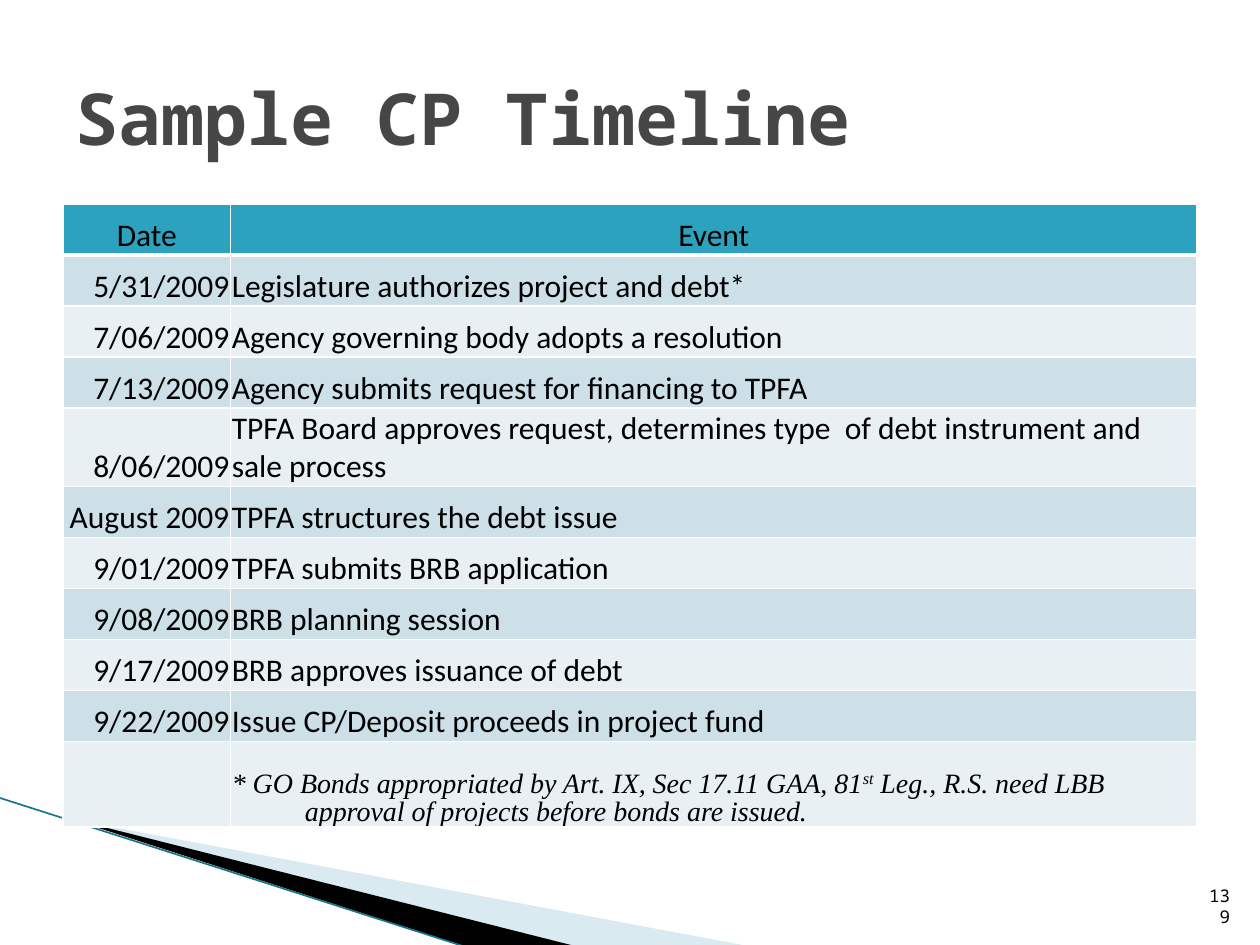
from lxml.etree import SubElement
from pptx import Presentation
from pptx.dml.color import RGBColor
from pptx.enum.shapes import MSO_CONNECTOR
from pptx.enum.text import MSO_ANCHOR, PP_ALIGN
from pptx.oxml.ns import qn
from pptx.util import Inches, Pt

THEME = {
    "title": "464646", "text": "000000", "header": "2DA2BF",
    "bands": ("CDE0E8", "E8F0F4"), "border": "FFFFFF",
    "sweep": "A0CBDC", "wedge": "000000", "edge": "1B7587",
    "heading_font": "Noto Sans Mono", "body_font": "Calibri", "note_font": "Times New Roman",
    "title_size": 41, "body_size": 18, "note_size": 16, "number_size": 10,
}


def style_font(font, name, size, color, bold=False, italic=False):
    font.name, font.size = name, Pt(size)
    font.bold, font.italic = bold, italic
    font.color.rgb = RGBColor.from_string(color)


def add_border(cell, side, width):
    line = SubElement(cell._tc.get_or_add_tcPr(), qn(f"a:{side}"), w=str(Pt(width)))
    fill = SubElement(line, qn("a:solidFill"))
    SubElement(fill, qn("a:srgbClr"), val=THEME["border"])


deck = Presentation()
deck.slide_width, deck.slide_height = Inches(10), Inches(7.5)
page = deck.slides.add_slide(deck.slide_layouts[5])

# Corner decoration
wedges = [
    ("sweep", 40, [(0.55, 6.5), (5.95, 7.51), (4.56, 7.51)]),
    ("wedge", 100, [(0.53, 6.49), (4.57, 7.51), (3.72, 7.52)]),
]
for color, opacity, points in wedges:
    corners = [(Inches(x), Inches(y)) for x, y in points]
    builder = page.shapes.build_freeform(*corners[0])
    builder.add_line_segments(corners[1:], close=True)
    wedge = builder.convert_to_shape()
    wedge.shadow.inherit = False
    wedge.line.fill.background()
    wedge.fill.solid()
    wedge.fill.fore_color.rgb = RGBColor.from_string(THEME[color])
    if opacity < 100:
        tint = wedge._element.spPr.find(qn("a:solidFill")).find(qn("a:srgbClr"))
        SubElement(tint, qn("a:alpha"), val=str(opacity * 1000))

edge = page.shapes.add_connector(
    MSO_CONNECTOR.STRAIGHT, Inches(-0.01), Inches(6.33), Inches(3.71), Inches(7.52))
edge.line.color.rgb = RGBColor.from_string(THEME["edge"])
edge.line.width = Pt(0.95)
SubElement(edge._element.spPr, qn("a:effectLst"))

# Timeline table
rows = [
    ("Date", "Event"),
    ("5/31/2009", "Legislature authorizes project and debt*"),
    ("7/06/2009", "Agency governing body adopts a resolution"),
    ("7/13/2009", "Agency submits request for financing to TPFA"),
    ("8/06/2009", "TPFA Board approves request, determines type  of debt instrument and sale process"),
    ("August 2009", "TPFA structures the debt issue"),
    ("9/01/2009", "TPFA submits BRB application"),
    ("9/08/2009", "BRB planning session"),
    ("9/17/2009", "BRB approves issuance of debt"),
    ("9/22/2009", "Issue CP/Deposit proceeds in project fund"),
    ("", ""),
]
frame = page.shapes.add_table(
    len(rows), 2, Inches(0.5), Inches(1.62), Inches(9), Inches(4.99))
table = frame.table
table.first_row = table.horz_banding = False
table.columns[0].width, table.columns[1].width = Inches(1.33), Inches(7.67)

for row_index, texts in enumerate(rows):
    table.rows[row_index].height = Inches(0.405)
    for column_index, text in enumerate(texts):
        cell = table.cell(row_index, column_index)
        cell.vertical_anchor = MSO_ANCHOR.BOTTOM
        cell.margin_left = cell.margin_right = cell.margin_top = Inches(0.01)
        cell.margin_bottom = 0
        add_border(cell, "lnL", 1)
        add_border(cell, "lnR", 1)
        add_border(cell, "lnT", 3 if row_index == 1 else 1)
        add_border(cell, "lnB", 3 if row_index == 0 else 1)
        cell.fill.solid()
        color = THEME["bands"][(row_index - 1) % 2] if row_index else THEME["header"]
        cell.fill.fore_color.rgb = RGBColor.from_string(color)
        para = cell.text_frame.paragraphs[0]
        para.text = text
        if row_index == 0:
            para.alignment = PP_ALIGN.CENTER
        else:
            para.alignment = PP_ALIGN.LEFT if column_index else PP_ALIGN.RIGHT
        style_font(para.font, THEME["body_font"], THEME["body_size"], THEME["text"])
        for span in para.runs:
            style_font(span.font, THEME["body_font"], THEME["body_size"], THEME["text"])

# Footnote in the last row, with a hanging indent
last_row = len(rows) - 1
table.rows[last_row].height = Inches(0.68)
table.rows[4].height = Inches(0.62)
note = table.cell(last_row, 1).text_frame.paragraphs[0]
note.line_spacing = 0.9
properties = note._p.get_or_add_pPr()
properties.set("marL", str(Inches(0.58)))
properties.set("indent", str(Inches(-0.58)))
for text, is_raised in [
    ("* GO Bonds appropriated by Art. IX, Sec 17.11 GAA, 81", False),
    ("st", True),
    (" Leg., R.S. need LBB approval of projects before bonds are issued.", False),
]:
    span = note.add_run()
    span.text = text
    style_font(span.font, THEME["note_font"], THEME["note_size"], THEME["text"], italic=True)
    if is_raised:
        span.font._element.set("baseline", "30000")

# Title
title = page.shapes.title
title.left, title.top, title.width, title.height = (
    Inches(0.5), Inches(0.3), Inches(9), Inches(1.25))
title.text_frame.text = "Sample CP Timeline"
title.text_frame.vertical_anchor = MSO_ANCHOR.MIDDLE
para = title.text_frame.paragraphs[0]
para.alignment = PP_ALIGN.LEFT
style_font(para.runs[0].font, THEME["heading_font"], THEME["title_size"], THEME["title"], bold=True)

# Page number
box = page.shapes.add_textbox(Inches(9.42), Inches(7.01), Inches(0.44), Inches(0.4))
box.text_frame.word_wrap = True
box.text_frame.vertical_anchor = MSO_ANCHOR.BOTTOM
box.text_frame.text = "139"
para = box.text_frame.paragraphs[0]
para.alignment = PP_ALIGN.RIGHT
style_font(para.runs[0].font, THEME["heading_font"], THEME["number_size"], THEME["text"])

deck.save("out.pptx")
